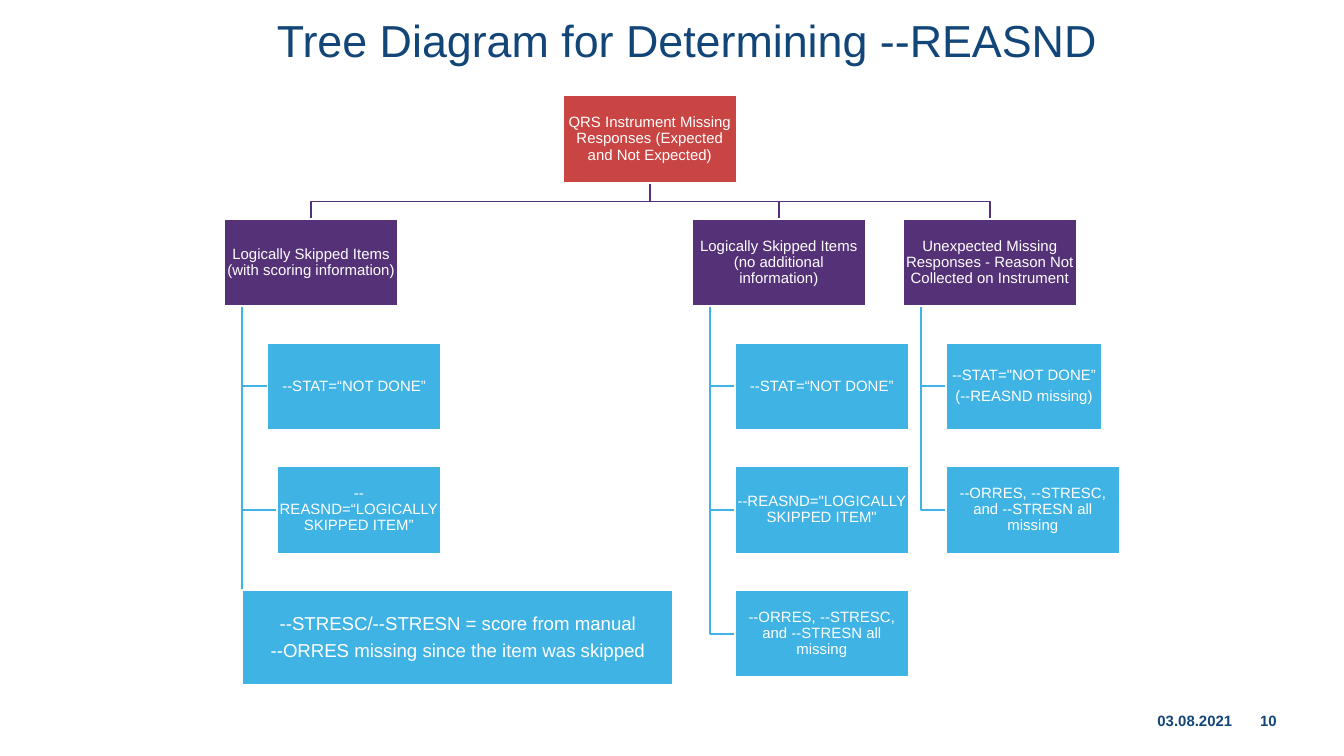
from pptx import Presentation
from pptx.dml.color import RGBColor
from pptx.enum.shapes import MSO_CONNECTOR, MSO_SHAPE
from pptx.enum.text import MSO_ANCHOR, PP_ALIGN
from pptx.oxml.ns import qn
from pptx.util import Inches, Pt
from lxml.etree import SubElement

COLORS = {"navy": "134678", "red": "C94543", "purple": "553278",
          "blue": "40B3E5", "white": "FFFFFF"}
BOX_W, BOX_H = 1.29, 0.65
ROOT_LEFT, ROOT_TOP = 4.19, 0.71
HEAD_TOP, CHILD_TOP, PITCH = 1.63, 2.55, 0.92
TRUNK, INDENT = 0.13, 0.32
ROOT_TEXT = "QRS Instrument Missing Responses (Expected and Not Expected)"
ALL_MISSING = "--ORRES, --STRESC, and --STRESN all missing"

branches = [
    (1.67, "Logically Skipped Items (with scoring information)", [
        (INDENT, BOX_W, BOX_H, 8, "--STAT=“NOT DONE”"),
        (0.39, 1.22, BOX_H, 8, "--REASND=“LOGICALLY SKIPPED ITEM”"),
        (TRUNK, 3.21, 0.71, 10, "--STRESC/--STRESN = score from manual\n"
                                "--ORRES missing since the item was skipped"),
    ]),
    (5.15, "Logically Skipped Items (no additional information)", [
        (INDENT, BOX_W, BOX_H, 8, "--STAT=“NOT DONE”"),
        (INDENT, BOX_W, BOX_H, 8, '--REASND="LOGICALLY SKIPPED ITEM"'),
        (INDENT, BOX_W, BOX_H, 8, ALL_MISSING),
    ]),
    (6.72, "Unexpected Missing Responses - Reason Not Collected on Instrument", [
        (INDENT, 1.16, BOX_H, 8, '--STAT="NOT DONE”\n(--REASND missing)'),
        (INDENT, BOX_W, BOX_H, 8, ALL_MISSING),
    ]),
]


def write(tf, text, size=8, color="white", bold=False, align=PP_ALIGN.CENTER,
          margin=0.0, line=0.9, after=0.0):
    tf.word_wrap = True
    tf.vertical_anchor = MSO_ANCHOR.MIDDLE
    tf.margin_left = tf.margin_right = Inches(margin)
    tf.margin_top = tf.margin_bottom = Inches(margin)
    for i, part in enumerate(text.split("\n")):
        p = tf.add_paragraph() if i else tf.paragraphs[0]
        p.alignment = align
        p.line_spacing = line
        p.space_before = Pt(0)
        p.space_after = Pt(after)
        r = p.add_run()
        r.text = part
        r.font.name = "Arial"
        r.font.size = Pt(size)
        r.font.bold = bold
        r.font.color.rgb = RGBColor.from_string(COLORS[color])


def draw_line(s, points, color):
    pts = [(Inches(x), Inches(y)) for x, y in points]
    if len(pts) == 2:
        sp = s.shapes.add_connector(MSO_CONNECTOR.STRAIGHT, *pts[0], *pts[1])
        SubElement(sp._element.spPr, qn("a:effectLst"))
    else:
        builder = s.shapes.build_freeform(*pts[0])
        builder.add_line_segments(pts[1:], close=False)
        sp = builder.convert_to_shape()
        sp.fill.background()
        sp.shadow.inherit = False
    sp.line.color.rgb = RGBColor.from_string(COLORS[color])
    sp.line.width = Pt(1)


prs = Presentation()
prs.slide_width = Inches(10)
prs.slide_height = prs.slide_width * 9 // 16
s = prs.slides.add_slide(prs.slide_layouts[5])

title = s.shapes.title
title.left, title.top = Inches(0.72), Inches(0)
title.width, title.height = Inches(8.78), Inches(0.64)
write(title.text_frame, "Tree Diagram for Determining --REASND", size=24, color="navy")

for left, width, text in [(7.85, 1.32, "03.08.2021"), (9.17, 0.33, "10")]:
    sp = s.shapes.add_textbox(Inches(left), Inches(5.21), Inches(width), Inches(0.3))
    write(sp.text_frame, text, color="navy", bold=True, align=PP_ALIGN.RIGHT, line=1.0)

boxes = [(ROOT_LEFT, ROOT_TOP, BOX_W, BOX_H, 8, ROOT_TEXT, "red")]
root_x, root_bottom = ROOT_LEFT + BOX_W / 2, ROOT_TOP + BOX_H
for left, head, children in branches:
    head_x, trunk_x = left + BOX_W / 2, left + TRUNK
    boxes.append((left, HEAD_TOP, BOX_W, BOX_H, 8, head, "purple"))
    draw_line(s, [(root_x, root_bottom), (root_x, 1.5), (head_x, 1.5),
                  (head_x, HEAD_TOP)], "purple")
    for row, (offset, width, height, size, text) in enumerate(children):
        top = CHILD_TOP + row * PITCH
        boxes.append((left + offset, top, width, height, size, text, "blue"))
        points = [(trunk_x, HEAD_TOP + BOX_H), (trunk_x, top + height / 2)]
        if offset > TRUNK:
            points.append((left + offset, top + height / 2))
        draw_line(s, points, "blue")

for left, top, width, height, size, text, color in boxes:
    sp = s.shapes.add_shape(MSO_SHAPE.RECTANGLE, Inches(left), Inches(top),
                            Inches(width), Inches(height))
    sp.shadow.inherit = False
    sp.fill.solid()
    sp.fill.fore_color.rgb = RGBColor.from_string(COLORS[color])
    sp.line.color.rgb = RGBColor.from_string(COLORS["white"])
    sp.line.width = Pt(1)
    write(sp.text_frame, text, size=size, margin=0.01, after=size * 0.35)

prs.save("out.pptx")
